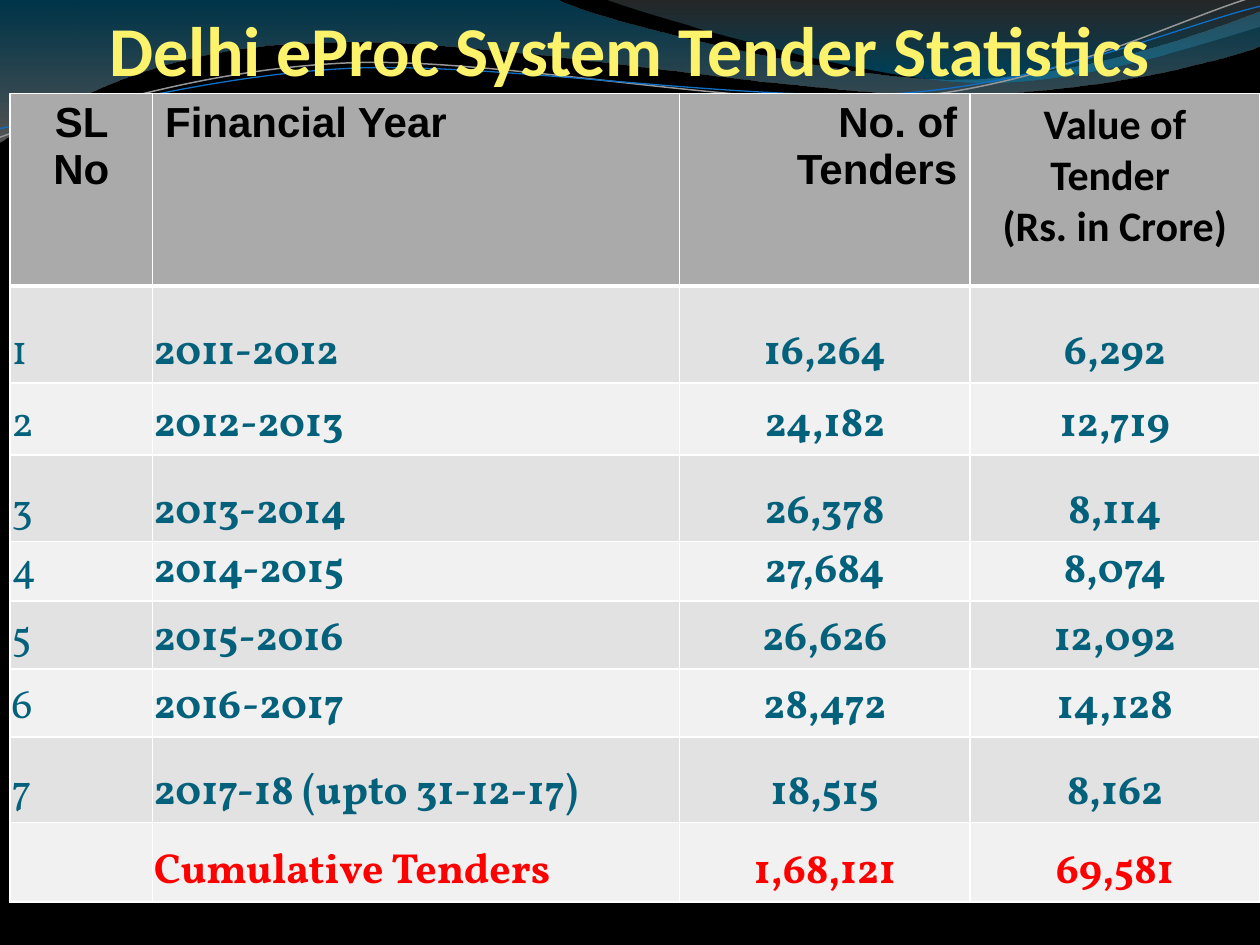
import math

import pptx
import pptx.dml.color
import pptx.enum.text
import pptx.oxml
import pptx.oxml.ns
import pptx.util

RGB = pptx.dml.color.RGBColor
ALIGN = pptx.enum.text.PP_ALIGN
ANCHOR = pptx.enum.text.MSO_ANCHOR
Inches, Pt = pptx.util.Inches, pptx.util.Pt
qn = pptx.oxml.ns.qn

BLACK, WHITE = RGB(0, 0, 0), RGB(255, 255, 255)
YELLOW, RED, TEAL = RGB(0xFC, 0xF2, 0x6C), RGB(255, 0, 0), RGB(0x04, 0x61, 0x7B)
HEAD_FILL = RGB(0xAA, 0xAA, 0xAA)
BAND_FILLS = RGB(0xE2, 0xE2, 0xE2), RGB(0xF1, 0xF1, 0xF1)
DEEP_BLUE, SKY_BLUE = RGB(0, 0x74, 0xA1), RGB(0, 0x8B, 0xBF)
SILVER, GREY = RGB(0x9A, 0x9A, 0x9A), RGB(0x7E, 0x7E, 0x7E)
LINE_GREY, LINE_BLUE = RGB(0x96, 0x96, 0x96), RGB(0x0F, 0x6F, 0xC6)

W, H = 10, 7.5
WAVE_TILT = -2.7
COL_WIDTHS = [1.13, 4.18, 2.3, 2.3]
ROW_HEIGHTS = [1.53, 0.77, 0.57, 0.69, 0.47, 0.54, 0.54, 0.68, 0.63]
HEADERS = ["SL No", "Financial Year", "No. of Tenders", "Value of Tender \n(Rs. in Crore)"]
HEAD_ALIGNS = [ALIGN.CENTER, ALIGN.LEFT, ALIGN.RIGHT, ALIGN.CENTER]
BODY_ALIGNS = [ALIGN.LEFT, ALIGN.LEFT, ALIGN.CENTER, ALIGN.CENTER]
ROWS = [
    ("1", "2011-2012", "16,264", "6,292"),
    ("2", "2012-2013", "24,182", "12,719"),
    ("3", "2013-2014", "26,378", "8,114"),
    ("4", "2014-2015", "27,684", "8,074"),
    ("5", "2015-2016", "26,626", "12,092"),
    ("6", "2016-2017", "28,472", "14,128"),
    ("7", "2017-18 (upto 31-12-17)", "18,515", "8,162"),
    ("", "Cumulative Tenders", "1,68,121", "69,581"),
]

# Each outline is a start point, then steps of one point (line) or three (curve)
LEFT_SWOOSH = [
    [(0, -0.01)], [(4.4, -0.01)],
    [(4.76, 0.17), (6.64, 0.63), (7.58, 0.63)],
    [(8.53, 0.63), (9.58, 0.26), (10, 0.09)], [(10.01, 0.36)],
    [(9.83, 0.44), (8.7, 0.76), (7.46, 0.75)],
    [(6.22, 0.75), (3.82, 0.28), (2.57, 0.34)],
    [(1.29, 0.35), (0.46, 0.83), (-0.01, 1.13)],
]
RIGHT_SWOOSH = [
    [(4.79, -0.01)],
    [(5.09, 0.11), (6.82, 0.62), (7.69, 0.65)],
    [(8.56, 0.69), (9.61, 0.32), (10, 0.21)], [(10, 0)],
]
GREY_WAVE = [
    [(0, 1.09)],
    [(0.48, 0.92), (1.57, 0.55), (2.76, 0.5)],
    [(3.95, 0.45), (5.92, 0.87), (7.12, 0.78)],
    [(8.33, 0.69), (9.38, 0.14), (9.97, -0.03)],
]
BLUE_WAVE = [
    [(0, 1.02)],
    [(0.47, 0.94), (1.63, 0.59), (2.83, 0.54)],
    [(4.02, 0.5), (5.97, 0.82), (7.17, 0.74)],
    [(8.36, 0.65), (9.41, 0.19), (10, 0.05)],
]


def put_text(tf, text, align=ALIGN.LEFT, font="Calibri", size=24, color=BLACK, bold=True):
    for i, line in enumerate(text.split("\n")):
        p = tf.paragraphs[0] if i == 0 else tf.add_paragraph()
        p.alignment = align
        r = p.add_run()
        r.text = line
        r.font.name, r.font.size, r.font.bold = font, Pt(size), bold
        r.font.color.rgb = color


def turn(outline, center, degrees):
    cos, sin = math.cos(math.radians(degrees)), math.sin(math.radians(degrees))
    cx, cy = center
    return [[(cx + (x - cx) * cos - (y - cy) * sin, cy + (x - cx) * sin + (y - cy) * cos)
             for x, y in step] for step in outline]


def add_outline(shapes, outline, close):
    pts = [(Inches(x), Inches(y)) for step in outline for x, y in step]
    fb = shapes.build_freeform(*pts[0], scale=1)
    fb.add_line_segments(pts[1:], close=close)
    sp = fb.convert_to_shape()
    sp.shadow.inherit = False
    # Merge each three-point step into one Bezier segment
    segments = iter(list(sp.element.spPr.iter(qn("a:lnTo"))))
    for step in outline[1:]:
        group = [next(segments) for _ in step]
        if len(group) == 3:
            curve = group[0].makeelement(qn("a:cubicBezTo"), {})
            group[0].addprevious(curve)
            for segment in group:
                curve.append(segment[0])
                segment.getparent().remove(segment)
    return sp


def add_swoosh(shapes, outline, stops):
    sp = add_outline(shapes, outline, True)
    sp.line.fill.background()
    sp.fill.gradient()
    sp.fill.gradient_angle = 270
    for gs, (pos, color, _) in zip(sp.fill.gradient_stops, stops):
        gs.position, gs.color.rgb = pos, color
    colors = list(sp.element.spPr.iter(qn("a:srgbClr")))
    for clr, (_, _, opacity) in zip(colors, stops):
        clr.append(clr.makeelement(qn("a:alpha"), {"val": str(opacity * 1000)}))


def add_wave(shapes, outline, center, color, width):
    sp = add_outline(shapes, turn(outline, center, -WAVE_TILT), False)
    sp.rotation = WAVE_TILT
    sp.fill.background()
    sp.line.color.rgb, sp.line.width = color, Pt(width)


def add_backdrop(s):
    s.background.fill.solid()
    s.background.fill.fore_color.rgb = BLACK
    add_swoosh(s.shapes, LEFT_SWOOSH, [(0, DEEP_BLUE, 45), (1, SILVER, 55)])
    add_swoosh(s.shapes, RIGHT_SWOOSH, [(0, GREY, 30), (0.8, SKY_BLUE, 45)])
    waves = s.shapes.add_group_shape().shapes
    add_wave(waves, GREY_WAVE, (W / 2, 0.57), LINE_GREY, 0.85)
    add_wave(waves, BLUE_WAVE, (W / 2, 0.58), LINE_BLUE, 0.75)


def add_title(s, text, box):
    sp = s.shapes.title
    sp.left, sp.top, sp.width, sp.height = map(Inches, box)
    tf = sp.text_frame
    tf.word_wrap, tf.vertical_anchor = True, ANCHOR.TOP
    tf.auto_size = pptx.enum.text.MSO_AUTO_SIZE.SHAPE_TO_FIT_TEXT
    put_text(tf, text, align=ALIGN.CENTER, size=40, color=YELLOW)
    sp.element.getparent().append(sp.element)  # bring in front of the backdrop


def set_borders(cell, bottom):
    tcPr = cell._tc.get_or_add_tcPr()
    for i, (side, width) in enumerate(zip("LRTB", (1, 1, 1, bottom))):
        tcPr.insert(i, pptx.oxml.parse_xml(
            f'<a:ln{side} {pptx.oxml.ns.nsdecls("a")} w="{Pt(width)}"><a:solidFill>'
            f'<a:srgbClr val="{WHITE}"/></a:solidFill></a:ln{side}>'))


def style_cell(cell, fill, margins, anchor, bottom=1):
    cell.fill.solid()
    cell.fill.fore_color.rgb = fill
    (cell.margin_left, cell.margin_top,
     cell.margin_right, cell.margin_bottom) = map(Inches, margins)
    cell.vertical_anchor = anchor
    set_borders(cell, bottom)


def add_tender_table(s, box):
    table = s.shapes.add_table(len(ROWS) + 1, len(HEADERS), *map(Inches, box)).table
    table.horz_banding = False
    for col, width in zip(table.columns, COL_WIDTHS):
        col.width = Inches(box[2] * width / sum(COL_WIDTHS))
    for row, height in zip(table.rows, ROW_HEIGHTS):
        row.height = Inches(box[3] * height / sum(ROW_HEIGHTS))
    # Header row
    for c, (text, align) in enumerate(zip(HEADERS, HEAD_ALIGNS)):
        cell = table.cell(0, c)
        style_cell(cell, HEAD_FILL, (0.1, 0.05, 0.1, 0.05), ANCHOR.TOP, bottom=3)
        put_text(cell.text_frame, text, align=align, font="Calibri" if c == 3 else "Arial")
    # Yearly rows, then the total in red
    for i, row in enumerate(ROWS):
        color = RED if i == len(ROWS) - 1 else TEAL
        for c, (text, align) in enumerate(zip(row, BODY_ALIGNS)):
            cell = table.cell(i + 1, c)
            style_cell(cell, BAND_FILLS[i % 2], (0.01, 0.01, 0.01, 0), ANCHOR.BOTTOM)
            if text:
                put_text(cell.text_frame, text, align=align, font="Vollkorn",
                         color=color, bold=c > 0)


def main():
    prs = pptx.Presentation()
    prs.slide_width, prs.slide_height = Inches(W), Inches(H)
    s = prs.slides.add_slide(prs.slide_layouts[5])
    add_backdrop(s)
    add_title(s, "Delhi eProc System Tender Statistics", (0, 0, W, 0.77))
    add_tender_table(s, (0.08, 0.74, W - 0.08, 6.42))
    prs.save("out.pptx")


if __name__ == "__main__":
    main()
